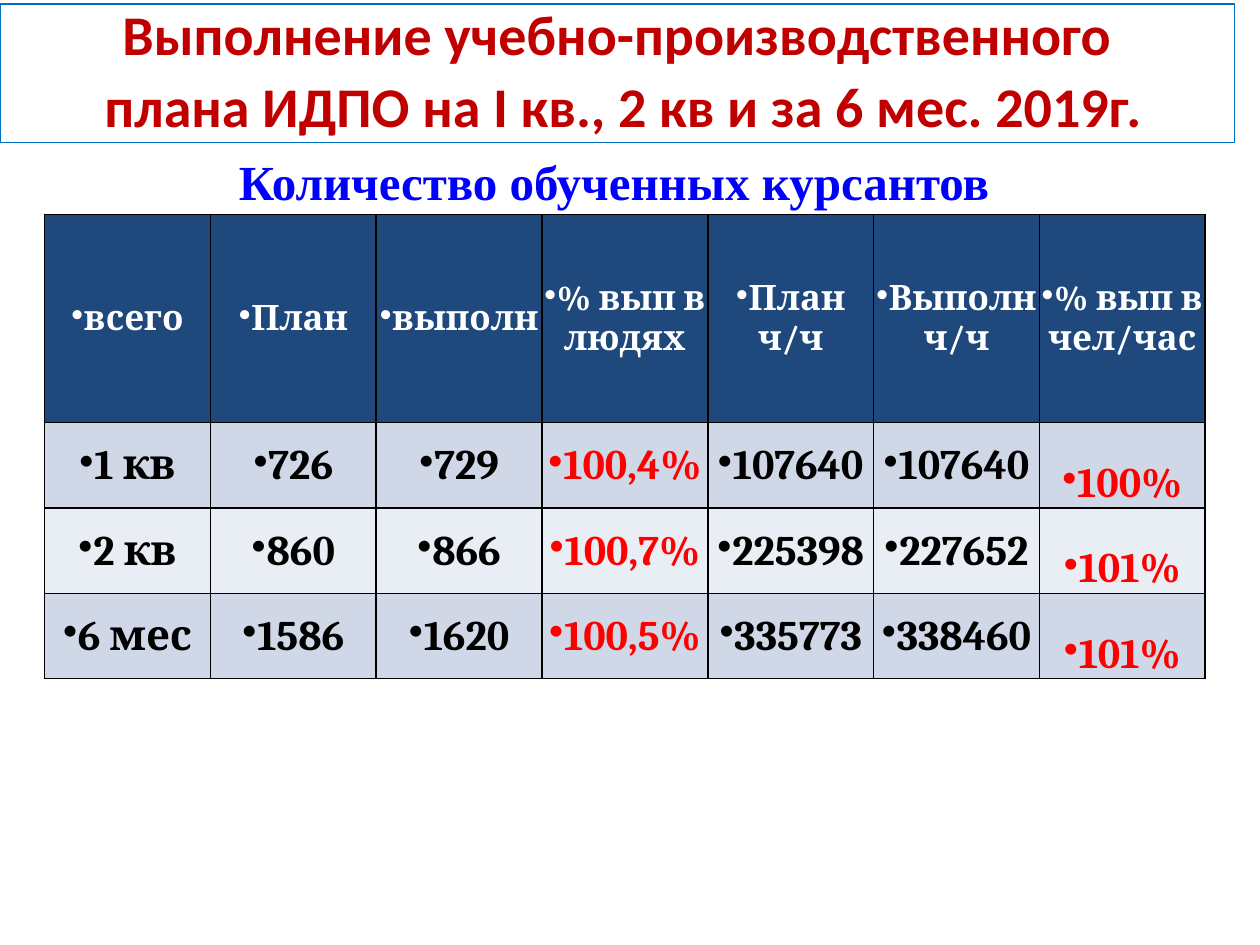
import pptx
import pptx.dml.color
import pptx.enum.shapes
import pptx.enum.text
import pptx.oxml.ns
import pptx.util
from lxml import etree
from pptx.util import Cm, Pt

COLORS = {
    "title": "C00000", "frame": "0070C0", "subtitle": "0000FF",
    "header": "1F497D", "header_text": "FFFFFF",
    "odd_row": "D0D8E8", "even_row": "E9EDF4",
    "body": "000000", "percent": "FF0000", "border": "000000",
}
HEADINGS = ["всего", "План", "выполн", "% вып в людях", "План ч/ч",
            "Выполн ч/ч", "% вып в чел/час"]
RESULTS = [
    ["1 кв", "726", "729", "100,4%", "107640", "107640", "100%"],
    ["2 кв", "860", "866", "100,7%", "225398", "227652", "101%"],
    ["6 мес", "1586", "1620", "100,5%", "335773", "338460", "101%"],
]
PERCENT_COLUMNS = (3, 6)
MIDDLE = pptx.enum.text.MSO_ANCHOR.MIDDLE
BOTTOM = pptx.enum.text.MSO_ANCHOR.BOTTOM


def rgb(name):
    return pptx.dml.color.RGBColor.from_string(COLORS[name])


def write(frame, text, *, font, size, color, space_before=0, line_spacing=None, bullet=False):
    """Fill a text frame with bold centred paragraphs, one per line of text."""
    frame.word_wrap = True
    for number, line in enumerate(text.split("\n")):
        paragraph = frame.add_paragraph() if number else frame.paragraphs[0]
        paragraph.alignment = pptx.enum.text.PP_ALIGN.CENTER
        paragraph.space_before = Pt(space_before)
        if line_spacing:
            paragraph.line_spacing = line_spacing
        run = paragraph.add_run()
        run.text = line
        run.font.name, run.font.size, run.font.bold = font, Pt(size), True
        run.font.color.rgb = rgb(color)
        if bullet:
            add_bullet(paragraph)


def add_bullet(paragraph):
    properties = paragraph._p.get_or_add_pPr()
    properties.set("marL", "0")
    properties.set("indent", "0")
    etree.SubElement(properties, pptx.oxml.ns.qn("a:buFontTx"))
    etree.SubElement(properties, pptx.oxml.ns.qn("a:buChar"), char="•")


def add_borders(cell):
    properties = cell._tc.get_or_add_tcPr()
    for position, side in enumerate(("lnL", "lnR", "lnT", "lnB")):
        line = etree.Element(pptx.oxml.ns.qn(f"a:{side}"), w=str(Pt(1)))
        fill = etree.SubElement(line, pptx.oxml.ns.qn("a:solidFill"))
        etree.SubElement(fill, pptx.oxml.ns.qn("a:srgbClr"), val=COLORS["border"])
        properties.insert(position, line)


def add_title(slide):
    banner = slide.shapes.add_shape(pptx.enum.shapes.MSO_SHAPE.RECTANGLE,
                                    Cm(0), Cm(0.08), Cm(24.89), Cm(2.79))
    banner.shadow.inherit = False
    banner.fill.background()
    banner.line.color.rgb = rgb("frame")
    banner.line.width = Pt(0.75)
    banner.text_frame.vertical_anchor = MIDDLE
    write(banner.text_frame,
          "Выполнение учебно-производственного\n"
          " плана ИДПО на I кв., 2 кв и за 6 мес. 2019г.",
          font="Calibri", size=32, color="title", space_before=6.4, line_spacing=0.9)


def add_subtitle(slide):
    subtitle = slide.shapes.add_textbox(Cm(1.5), Cm(2.92), Cm(22), Cm(8.64))
    write(subtitle.text_frame, "Количество обученных курсантов ",
          font="Times New Roman", size=28, color="subtitle")


def fill_cell(cell, text, *, fill, size, color, anchor=MIDDLE):
    cell.margin_left = cell.margin_right = cell.margin_top = Cm(0.03)
    cell.margin_bottom = 0
    cell.vertical_anchor = anchor
    cell.fill.solid()
    cell.fill.fore_color.rgb = rgb(fill)
    add_borders(cell)
    write(cell.text_frame, text, font="Cambria", size=size, color=color,
          space_before=size * 0.2, bullet=True)


def add_results(slide):
    table = slide.shapes.add_table(len(RESULTS) + 1, len(HEADINGS),
                                   Cm(0.9), Cm(4.32), Cm(23.4), Cm(9.37)).table
    for column in table.columns:
        column.width = Cm(23.4 / len(HEADINGS))
    for number, row in enumerate(table.rows):
        row.height = Cm(1.72 if number else 4.2)
    for column, heading in enumerate(HEADINGS):
        fill_cell(table.cell(0, column), heading, fill="header", size=20, color="header_text")
    for row, values in enumerate(RESULTS, start=1):
        for column, value in enumerate(values):
            fill_cell(table.cell(row, column), value, size=24,
                      fill="odd_row" if row % 2 else "even_row",
                      color="percent" if column in PERCENT_COLUMNS else "body",
                      anchor=BOTTOM if column == len(HEADINGS) - 1 else MIDDLE)


def main():
    deck = pptx.Presentation()
    deck.slide_width, deck.slide_height = Cm(25.4), Cm(19.05)
    slide = deck.slides.add_slide(deck.slide_layouts[6])
    add_title(slide)
    add_subtitle(slide)
    add_results(slide)
    deck.save("out.pptx")


if __name__ == "__main__":
    main()
